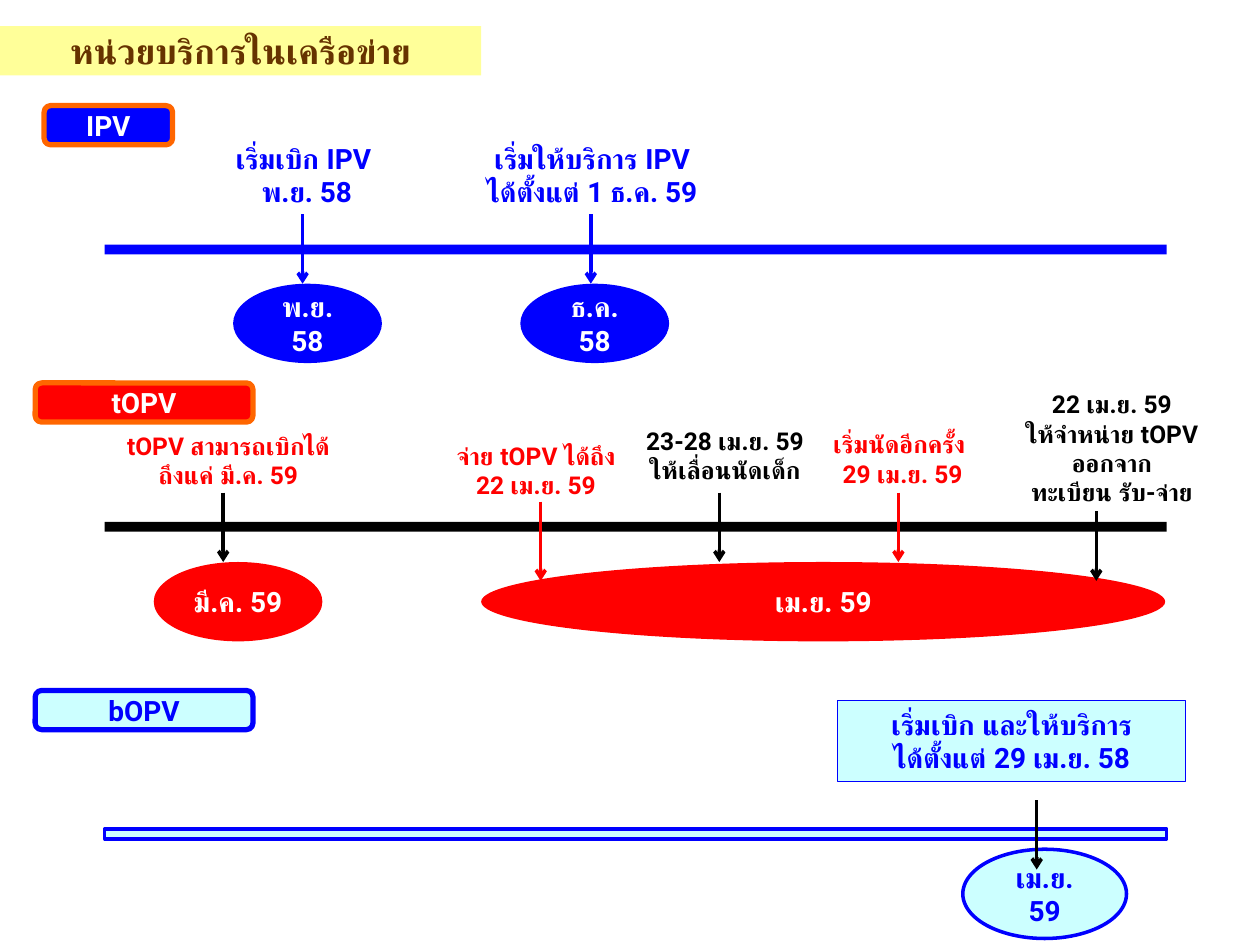
from dataclasses import dataclass

import pptx
import pptx.dml.color
import pptx.enum.shapes
import pptx.enum.text
import pptx.oxml
import pptx.oxml.ns
import pptx.util

Cm, Pt = pptx.util.Cm, pptx.util.Pt
SHAPE = pptx.enum.shapes.MSO_SHAPE
ANCHOR = pptx.enum.text.MSO_ANCHOR

COLORS = {
    "blue": "0000FF", "red": "FF0000", "black": "000000", "white": "FFFFFF",
    "orange": "FF6600", "pale": "CCFFFF", "yellow": "FFFF99", "brown": "663300",
}
BAR_LEFT, BAR_WIDTH, BAR_HEIGHT = 2.11, 21.41, 0.2
LABEL_HEIGHT, MONTH_HEIGHT, ARROW_LENGTH = 0.79, 1.6, 1.4


@dataclass
class Block:
    """A filled shape with optional outline and text; lengths in centimetres."""
    kind: SHAPE
    left: float
    top: float
    width: float
    height: float
    fill: str
    text: str = ""
    color: str = "white"
    line: str = ""
    weight: float = 3
    size: int = 16


@dataclass
class Note:
    left: float
    top: float
    text: str
    color: str
    size: int = 14
    width: float = 5.41
    height: float = 1.45


@dataclass
class Arrow:
    x: float
    top: float
    color: str
    length: float = ARROW_LENGTH


def bar(top: float, fill: str, line: str = "") -> Block:
    return Block(SHAPE.RECTANGLE, BAR_LEFT, top, BAR_WIDTH, BAR_HEIGHT, fill, line=line, weight=2)


def label(left: float, top: float, width: float, fill: str, text: str, color: str, line: str) -> Block:
    return Block(SHAPE.ROUNDED_RECTANGLE, left, top, width, LABEL_HEIGHT, fill, text, color, line)


def month(left: float, top: float, width: float, fill: str, text: str) -> Block:
    return Block(SHAPE.OVAL, left, top, width, MONTH_HEIGHT, fill, text)


BLOCKS = [
    Block(SHAPE.RECTANGLE, 0, 0.53, 9.7, 0.99, "yellow", "หน่วยบริการในเครือข่าย", "brown", size=20),
    bar(4.93, "blue"),
    label(0.89, 2.13, 2.59, "blue", "IPV", "white", "orange"),
    month(4.7, 5.72, 3, "blue", "พ.ย. 58"),
    month(10.49, 5.72, 3, "blue", "ธ.ค. 58"),
    bar(10.52, "black"),
    label(0.71, 7.72, 4.39, "red", "tOPV", "white", "orange"),
    month(3.1, 11.33, 3.4, "red", "มี.ค. 59"),
    month(9.7, 11.33, 13.79, "red", "เม.ย. 59"),
    bar(16.71, "pale", "blue"),
    label(0.71, 13.92, 4.39, "pale", "bOPV", "blue", "blue"),
    Block(SHAPE.OVAL, 19.41, 17.12, 3.3, 1.8, "pale", "เม.ย. 59", "blue", "blue", 2),
    Block(SHAPE.RECTANGLE, 16.89, 14.12, 7.01, 1.63, "pale",
          "เริ่มเบิก และให้บริการ\nได้ตั้งแต่ 29 เม.ย. 58", "blue", "blue", 0.75),
]
NOTES = [
    Note(4.09, 2.72, "เริ่มเบิก IPV \nพ.ย. 58", "blue", 16, 4.19, 1.63),
    Note(9.3, 2.72, "เริ่มให้บริการ IPV \nได้ตั้งแต่ 1 ธ.ค. 59 ", "blue", 16, height=1.63),
    Note(1.9, 8.56, "tOPV สามารถเบิกได้\nถึงแค่ มี.ค. 59", "red", height=2.06),
    Note(8.1, 8.76, "จ่าย tOPV ได้ถึง\n22 เม.ย. 59", "red", height=2.06),
    Note(11.91, 8.46, "23-28 เม.ย. 59\nให้เลื่อนนัดเด็ก", "black"),
    Note(15.49, 8.53, "เริ่มนัดอีกครั้ง \n29 เม.ย. 59", "red"),
    Note(19.71, 7.72, "22 เม.ย. 59\nให้จำหน่าย tOPV\nออกจาก\nทะเบียน รับ-จ่าย", "black", height=3.25),
]
ARROWS = [
    Arrow(6.1, 4.32, "blue"), Arrow(11.91, 4.32, "blue"),
    Arrow(4.5, 9.93, "black"), Arrow(10.9, 10.11, "red", 1.6),
    Arrow(14.5, 9.93, "black"), Arrow(18.11, 9.93, "red"),
    Arrow(22.1, 10.31, "black"), Arrow(20.9, 16.13, "black"),
]


def rgb(name: str) -> pptx.dml.color.RGBColor:
    return pptx.dml.color.RGBColor.from_string(COLORS[name])


def write(tf, text: str, size: int, color: str, anchor: ANCHOR) -> None:
    tf.word_wrap = True
    tf.vertical_anchor = anchor
    tf.text = text
    for p in tf.paragraphs:
        p.alignment = pptx.enum.text.PP_ALIGN.CENTER
        p.font.name, p.font.size, p.font.bold = "Roboto", Pt(size), True
        p.font.color.rgb = rgb(color)


def draw_block(s, b: Block) -> None:
    sp = s.shapes.add_shape(b.kind, Cm(b.left), Cm(b.top), Cm(b.width), Cm(b.height))
    sp.shadow.inherit = False
    sp.fill.solid()
    sp.fill.fore_color.rgb = rgb(b.fill)
    if b.line:
        sp.line.color.rgb = rgb(b.line)
        sp.line.width = Pt(b.weight)
    else:
        sp.line.fill.background()
    if b.text:
        write(sp.text_frame, b.text, b.size, b.color, ANCHOR.MIDDLE)


def draw_note(s, n: Note) -> None:
    sp = s.shapes.add_textbox(Cm(n.left), Cm(n.top), Cm(n.width), Cm(n.height))
    write(sp.text_frame, n.text, n.size, n.color, ANCHOR.TOP)


def draw_arrow(s, a: Arrow) -> None:
    sp = s.shapes.add_connector(pptx.enum.shapes.MSO_CONNECTOR.STRAIGHT,
                                Cm(a.x), Cm(a.top), Cm(a.x), Cm(a.top + a.length))
    sp.line.color.rgb = rgb(a.color)
    sp.line.width = Pt(2)
    ln = sp.line._get_or_add_ln()
    ns = pptx.oxml.ns.nsdecls("a")
    ln.append(pptx.oxml.parse_xml(f'<a:tailEnd {ns} type="arrow"/>'))
    ln.addnext(pptx.oxml.parse_xml(f"<a:effectLst {ns}/>"))


def main() -> None:
    prs = pptx.Presentation()
    prs.slide_width, prs.slide_height = Cm(25.4), Cm(19.05)
    s = prs.slides.add_slide(prs.slide_layouts[6])
    for block in BLOCKS:
        draw_block(s, block)
    for note in NOTES:
        draw_note(s, note)
    for arrow in ARROWS:
        draw_arrow(s, arrow)
    prs.save("out.pptx")


if __name__ == "__main__":
    main()
